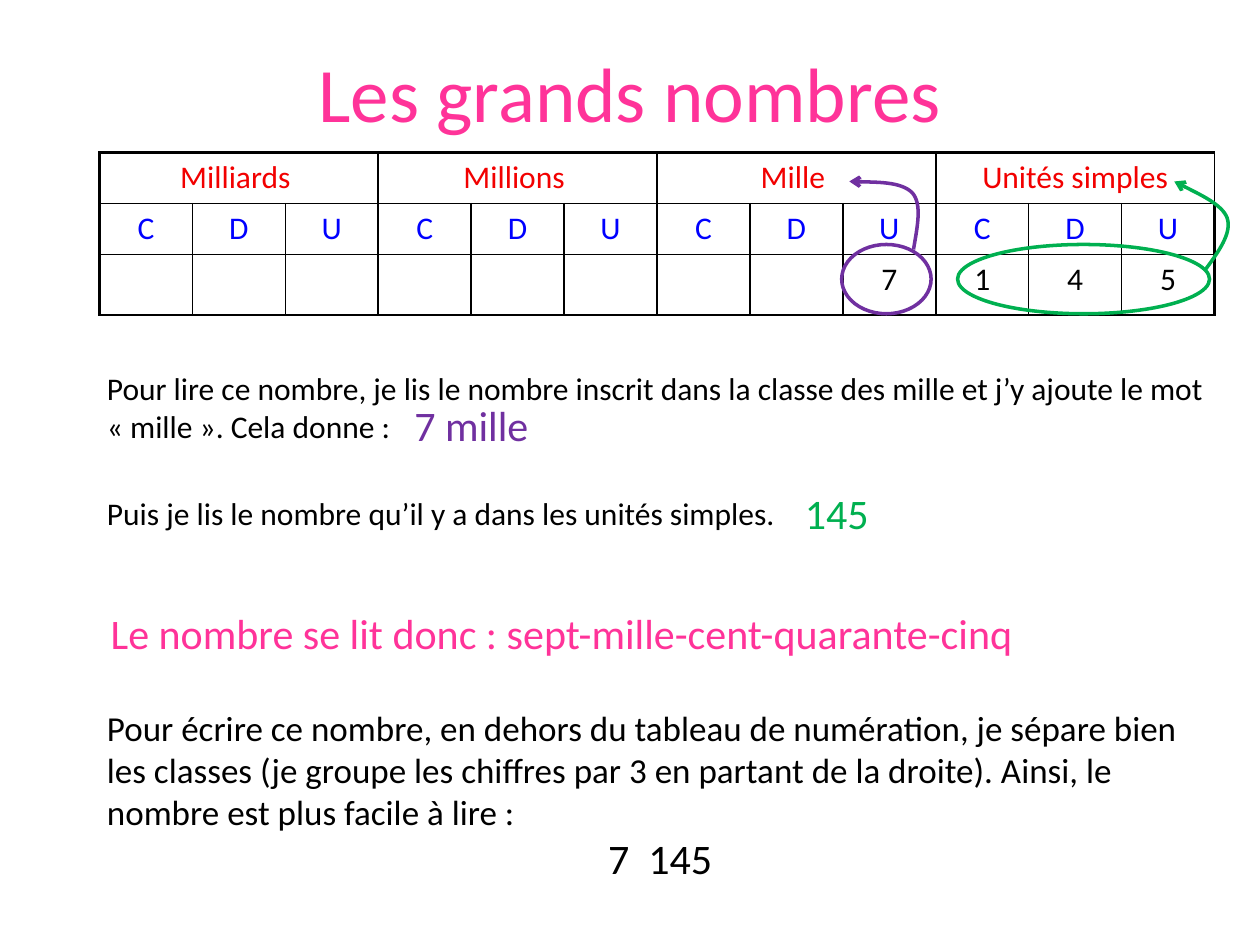
from dataclasses import dataclass

from lxml.etree import SubElement
from pptx import Presentation
from pptx.dml.color import RGBColor
from pptx.enum.shapes import MSO_SHAPE
from pptx.enum.text import MSO_ANCHOR, PP_ALIGN
from pptx.oxml.ns import qn
from pptx.util import Inches, Pt


@dataclass(frozen=True)
class Theme:
    font: str = "Calibri"
    pink: str = "FF3399"
    red: str = "F20000"
    blue: str = "0000FF"
    black: str = "000000"
    purple: str = "7030A0"
    green: str = "00B050"
    head: int = 44
    large: int = 24
    mid: int = 20
    small: int = 18
    pen: float = 2
    thick: float = 1.5
    thin: float = 1


class Board:
    def __init__(self, deck, theme):
        self.theme = theme
        self.slide = deck.slides.add_slide(deck.slide_layouts[5])
        self.col = deck.slide_width / 100
        self.row = deck.slide_height / 75

    def place(self, left, top, width, height):
        return (round(left * self.col), round(top * self.row),
                round(width * self.col), round(height * self.row))

    def words(self, para, text, size, color, align=PP_ALIGN.LEFT):
        para.alignment = align
        run = para.add_run()
        run.text = text
        run.font.name = self.theme.font
        run.font.size = Pt(size)
        run.font.color.rgb = RGBColor.from_string(color)

    def title(self, text, box):
        shape = self.slide.shapes.title
        shape.left, shape.top, shape.width, shape.height = self.place(*box)
        shape.text_frame.vertical_anchor = MSO_ANCHOR.MIDDLE
        self.words(shape.text_frame.paragraphs[0], text, self.theme.head,
                   self.theme.pink, PP_ALIGN.CENTER)

    def text(self, box, text, size, color):
        frame = self.slide.shapes.add_textbox(*self.place(*box)).text_frame
        frame.word_wrap = True
        self.words(frame.paragraphs[0], text, size, color)
        return frame

    def edge(self, cell, sides):
        props = cell._tc.get_or_add_tcPr()
        for side, width in sides.items():
            line = SubElement(props, qn(f"a:ln{side}"), w=str(Pt(width)))
            fill = SubElement(line, qn("a:solidFill"))
            SubElement(fill, qn("a:srgbClr"), val=self.theme.black)
        cell.fill.background()

    def table(self, box, heads, marks, digits, heights):
        theme = self.theme
        step = len(marks)
        count = len(heads) * step
        grid = self.slide.shapes.add_table(
            len(heights), count, *self.place(*box)).table
        grid.first_row = grid.horz_banding = False
        for col in grid.columns:
            col.width = round(box[2] * self.col / count)
        for row, height in zip(grid.rows, heights):
            row.height = round(height * self.row)
        last = len(heights) - 1
        for y in range(len(heights)):
            for x in range(count):
                self.edge(grid.cell(y, x), {
                    "L": theme.thin if x % step else theme.thick,
                    "R": theme.thin if (x + 1) % step else theme.thick,
                    "T": theme.thin if y else theme.thick,
                    "B": theme.thick if y == last else theme.thin})
        for x in range(count):
            grid.cell(1, x).vertical_anchor = MSO_ANCHOR.MIDDLE
            self.fill(grid.cell(1, x), marks[x % step], theme.blue)
        for n, head in enumerate(heads):
            cell = grid.cell(0, n * step)
            cell.merge(grid.cell(0, n * step + step - 1))
            self.fill(cell, head, theme.red)
        for x, digit in enumerate(digits, count - len(digits)):
            self.fill(grid.cell(last, x), digit, theme.black)

    def fill(self, cell, text, color):
        self.words(cell.text_frame.paragraphs[0], text, self.theme.small,
                   color, PP_ALIGN.CENTER)

    def trace(self, shape, color):
        shape.shadow.inherit = False
        shape.fill.background()
        shape.line.color.rgb = RGBColor.from_string(color)
        shape.line.width = Pt(self.theme.pen)

    def ring(self, box, color, points):
        group = self.slide.shapes.add_group_shape().shapes
        self.trace(group.add_shape(MSO_SHAPE.OVAL, *self.place(*box)), color)
        self.curve(group, points, color)

    def curve(self, group, points, color):
        spots = [self.place(x, y, 0, 0)[:2] for x, y in points]
        pen = group.build_freeform(*spots[0])
        pen.add_line_segments(spots[1:], close=False)
        shape = pen.convert_to_shape()
        route = shape._element.find(f".//{qn('a:path')}")
        lines = route.findall(qn("a:lnTo"))
        for n in range(0, len(lines), 3):
            bend = SubElement(route, qn("a:cubicBezTo"))
            for line in lines[n:n + 3]:
                bend.append(line[0])
                route.remove(line)
        self.trace(shape, color)
        SubElement(shape.line._get_or_add_ln(), qn("a:tailEnd"), type="arrow")


def main():
    deck = Presentation()
    deck.slide_width, deck.slide_height = Inches(10), Inches(7.5)
    theme = Theme()
    board = Board(deck, theme)
    left, wide = 7.5, 89.8

    board.title("Les grands nombres", (5, 3, 90, 8.5))
    board.table((7.9, 12.1, 88.5, 12.9),
                ("Milliards ", "Millions ", "Mille ", "Unités simples"),
                "CDU", "7145", (4.05, 4.05, 4.8))
    board.text((left, 28.8, wide, 7.1),
               "Pour lire ce nombre, je lis le nombre inscrit dans la classe "
               "des mille et j’y ajoute le mot « mille ». "
               "Cela donne :", theme.small, theme.black)
    board.ring((66.8, 19.4, 7.1, 5.5), theme.purple,
               ((72.5, 19.8), (72.8, 18), (73.2, 16.2), (72.4, 15.3),
                (71.5, 14.4), (67.4, 14.4), (67.4, 14.4)))
    board.text((31.9, 31.2, 15, 5), "7 mille", theme.large, theme.purple)
    board.text((left, 38.7, wide, 4),
               "Puis je lis le nombre qu’il y a dans les unités simples.",
               theme.small, theme.black)
    board.ring((76, 19.4, 20, 5.5), theme.green,
               ((95.6, 21.5), (96.7, 20), (97.8, 18.5), (97.4, 17.3),
                (97, 16.2), (93.2, 14.4), (93.2, 14.4)))
    board.text((62.9, 38.2, 15, 5), "145", theme.large, theme.green)
    board.text((7.8, 47.7, wide, 5),
               "Le nombre se lit donc : sept-mille-cent-quarante-cinq",
               theme.large, theme.pink)
    frame = board.text(
        (left, 55.6, wide, 15.1),
        "Pour écrire ce nombre, en dehors du tableau de numération, je sépare "
        "bien les classes (je groupe les chiffres par 3 en partant de la "
        "droite). Ainsi, le nombre est plus facile à lire :",
        theme.mid, theme.black)
    board.words(frame.add_paragraph(), "7  145", theme.large, theme.black,
                PP_ALIGN.CENTER)
    deck.save("out.pptx")


if __name__ == "__main__":
    main()
